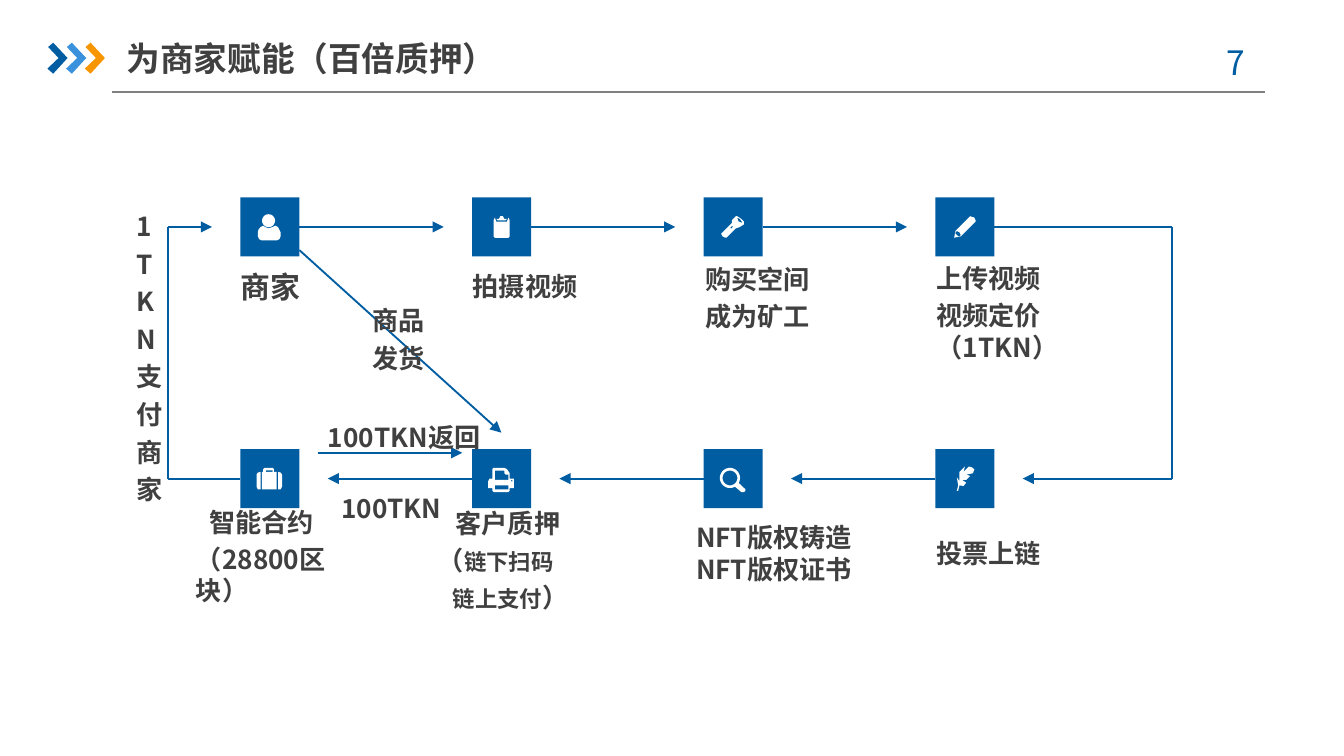
from dataclasses import dataclass
from math import cos, radians, sin

from lxml.etree import SubElement
from pptx import Presentation
from pptx.dml.color import RGBColor
from pptx.enum.shapes import MSO_CONNECTOR, MSO_SHAPE
from pptx.enum.text import MSO_ANCHOR as Anchor, PP_ALIGN as Align
from pptx.oxml.ns import qn
from pptx.util import Pt

BLUE = RGBColor(0x00, 0x5D, 0xA2)
SKY = RGBColor(0x39, 0x92, 0xDB)
ORANGE = RGBColor(0xF7, 0x96, 0x00)
GRAY = RGBColor(0x80, 0x80, 0x80)
DARK = RGBColor(0x40, 0x40, 0x40)
WHITE = RGBColor(0xFF, 0xFF, 0xFF)
FONT = "Noto Sans CJK SC"

# Flow grid, in points
TILE, GAP = 31.6, 15.2
COLUMNS = [128.8 + 124.1 * i for i in range(4)]
TOP, BOTTOM = 105.8, 240.6
TOP_MID, BOTTOM_MID = TOP + TILE / 2, BOTTOM + TILE / 2
LEFT_RAIL, RIGHT_RAIL = 89.8, 627.8
ICON_UNIT = 0.72
FINENESS = 100  # outline builder keeps whole numbers only

Point = tuple[float, float]
Contour = list[Point]


@dataclass(frozen=True)
class Run:
    text: str
    size: float = 14


@dataclass(frozen=True)
class Line:
    runs: tuple[Run, ...]
    indent: float = 0


@dataclass(frozen=True)
class Label:
    left: float
    top: float
    width: float
    height: float
    lines: tuple[Line, ...]
    bold: bool = True
    color: RGBColor = DARK
    align: Align = Align.LEFT
    anchor: Anchor = Anchor.MIDDLE
    margin: float = 7.2
    line_spacing: float = 1.0
    space_before: float = 3


@dataclass(frozen=True)
class Flow:
    start: Point
    end: Point
    arrow: bool = True
    color: RGBColor = BLUE
    width: float = 1


@dataclass(frozen=True)
class Step:
    column: int
    top: float
    icon: list[list[Contour]]  # shapes, each an outline followed by its holes


def lines(*texts: str, size: float = 14) -> tuple[Line, ...]:
    return tuple(Line((Run(text, size),)) for text in texts)


def annotation(left: float, top: float, width: float, height: float, *texts: str) -> Label:
    return Label(left, top, width, height, lines(*texts), align=Align.JUSTIFY,
                 anchor=Anchor.TOP, margin=0, line_spacing=1.2, space_before=0)


def arc(x: float, y: float, radius: float, start: int = 0, end: int = 360) -> Contour:
    return [(x + radius * cos(radians(a)), y + radius * sin(radians(a)))
            for a in range(start, end + 1, 10)]


def draw_outline(shapes, contours: list[Contour], left: float, top: float,
                 unit: float, color: RGBColor) -> None:
    fine = [[(x * FINENESS, y * FINENESS) for x, y in contour] for contour in contours]
    builder = shapes.build_freeform(*fine[0][0], scale=Pt(unit) / FINENESS)
    builder.add_line_segments(fine[0][1:])
    for hole in fine[1:]:
        builder.move_to(*hole[0])
        builder.add_line_segments(hole[1:])
    paint(builder.convert_to_shape(Pt(left), Pt(top)), color)


def paint(shape, color: RGBColor) -> None:
    shape.shadow.inherit = False
    shape.fill.solid()
    shape.fill.fore_color.rgb = color
    shape.line.fill.background()


def draw_step(shapes, step: Step) -> None:
    left = COLUMNS[step.column]
    tile = shapes.add_shape(MSO_SHAPE.RECTANGLE, Pt(left), Pt(step.top), Pt(TILE), Pt(TILE))
    paint(tile, BLUE)
    for contours in step.icon:
        draw_outline(shapes, contours, left, step.top, ICON_UNIT, WHITE)


def draw_flow(shapes, flow: Flow) -> None:
    ends = [Pt(value) for value in (*flow.start, *flow.end)]
    connector = shapes.add_connector(MSO_CONNECTOR.STRAIGHT, *ends)
    connector.line.color.rgb = flow.color
    connector.line.width = Pt(flow.width)
    if flow.arrow:
        SubElement(connector.line._get_or_add_ln(), qn("a:tailEnd"), type="triangle")
    SubElement(connector._element.spPr, qn("a:effectLst"))


def draw_label(shapes, label: Label) -> None:
    box = shapes.add_textbox(Pt(label.left), Pt(label.top), Pt(label.width), Pt(label.height))
    frame = box.text_frame
    frame.word_wrap = True
    frame.vertical_anchor = label.anchor
    frame.margin_left = frame.margin_right = Pt(label.margin)
    frame.margin_top = frame.margin_bottom = Pt(label.margin / 2)
    for i, line in enumerate(label.lines):
        paragraph = frame.paragraphs[0] if i == 0 else frame.add_paragraph()
        paragraph.alignment = label.align
        paragraph.line_spacing = label.line_spacing
        if i:
            paragraph.space_before = Pt(label.space_before)
        if line.indent:
            paragraph._p.get_or_add_pPr().set("marL", str(Pt(line.indent)))
        for part in line.runs:
            run = paragraph.add_run()
            run.text = part.text
            run.font.size = Pt(part.size)
            run.font.bold = label.bold
            run.font.color.rgb = label.color
            run.font.name = FONT
            SubElement(run._r.get_or_add_rPr(), qn("a:ea"), typeface=FONT)


# Icons, in units of ICON_UNIT from the tile's corner
PERSON = [[arc(21, 17.3, 4.8)],
          [[(30, 26), (29, 24), (28, 22), (26, 21), (24, 22), (21, 23), (18.5, 22), (17, 21),
            (15, 22), (13.5, 24), (13, 26), (13, 29), (14, 31), (16, 32), (27, 32), (29, 31), (30, 29)]]]
CLIPBOARD = [[[(27, 15), (26, 18), (18, 18), (17, 15), (16, 17), (16, 29), (17, 30), (27, 30), (28, 29), (28, 17)]],
             [[(25, 17), (26, 16), (24, 16), (23, 14), (21, 14), (20, 16), (18, 16), (19, 17)]]]
FLASHLIGHT = [[[(28, 16), (25, 14), (24, 14), (21, 17), (21, 19), (13, 27), (14, 29), (16, 30),
                (17, 30), (24, 23), (27, 22), (30, 20), (30, 18)],
               [(26, 18), (25, 15), (27, 16), (29, 19)], [(20, 23), (20, 22), (22, 21), (21, 23)]]]
PENCIL = [[[(29, 15), (26, 14), (15, 25), (14, 30), (19, 29), (30, 18), (30, 17)],
           [(18, 29), (17, 29), (15, 27), (15, 26), (16, 25), (18, 26), (19, 28)]]]
FEATHER = [[[(17, 31), (18, 27), (21, 27.5), (23, 25), (20, 23), (23, 23), (26, 20), (23, 19),
             (28, 18), (29, 15), (27, 13.5), (25, 13), (21, 17), (22, 13), (18, 17), (18, 24),
             (16, 21), (17, 27), (16, 31)]]]
MAGNIFIER = [[arc(19.5, 21.5, 7.5, 60, 390) + [(31, 30), (31, 31), (30, 32), (28, 32)],
              arc(19.5, 21.5, 5.5)]]
PRINTER = [[[(31, 22), (28, 22), (28, 18), (26, 15), (24, 14), (16, 14), (15, 15), (15, 22), (13, 22),
             (12, 24), (12, 29), (15, 29), (15, 31), (16, 32), (27, 32), (28, 31), (28, 29), (31, 29), (31, 24)],
            [(27, 23), (17, 23), (17, 16), (24, 16), (24, 18), (25, 19), (27, 19)],
            [(27, 30), (17, 30), (17, 27), (27, 27)], [(29, 24), (29, 23), (30, 23), (30, 24)]]]
SUITCASE = [[[(13, 17.5), (12, 19), (12, 28), (13, 30), (15, 30), (15, 17)]],
            [[(25, 15), (24, 14), (18, 14), (17, 15), (17, 17), (16, 17), (16, 30), (27, 30), (27, 17), (25, 17)],
             [(24, 17), (19, 17), (19, 16), (24, 16)]],
            [[(30, 17.5), (28, 17), (28, 30), (30, 30), (31, 28), (31, 19)]]]

CHEVRON = [(0.4, 2.3), (3.1, 0), (10.8, 8.2), (3.1, 16.6), (0, 13.9), (6, 8.2)]
STEPS = [Step(i, TOP, icon) for i, icon in enumerate((PERSON, CLIPBOARD, FLASHLIGHT, PENCIL))]
STEPS += [Step(i, BOTTOM, icon) for i, icon in enumerate((SUITCASE, PRINTER, MAGNIFIER, FEATHER))]

# Arrows between neighbouring steps, then the two side rails
FLOWS = []
for here, following in zip(COLUMNS, COLUMNS[1:]):
    FLOWS.append(Flow((here + TILE, TOP_MID), (following - GAP, TOP_MID)))
    FLOWS.append(Flow((following, BOTTOM_MID), (here + TILE + GAP, BOTTOM_MID)))
FLOWS += [
    Flow((COLUMNS[3] + TILE, TOP_MID), (RIGHT_RAIL, TOP_MID), arrow=False),
    Flow((RIGHT_RAIL, TOP_MID), (RIGHT_RAIL, BOTTOM_MID), arrow=False),
    Flow((RIGHT_RAIL, BOTTOM_MID), (COLUMNS[3] + TILE + GAP, BOTTOM_MID)),
    Flow((COLUMNS[0], BOTTOM_MID), (LEFT_RAIL, BOTTOM_MID), arrow=False),
    Flow((LEFT_RAIL, BOTTOM_MID), (LEFT_RAIL, TOP_MID), arrow=False),
    Flow((LEFT_RAIL, TOP_MID), (COLUMNS[0] - GAP, TOP_MID)),
    Flow((170.6, 242.6), (247.7, 242.6)),  # tokens returned
    Flow((COLUMNS[0] + TILE, 134), (268.6, 231.8)),  # goods shipped
]

LABELS = [
    # Header
    Label(67.9, 15.8, 203.8, 30.2, lines("为商家赋能（百倍质押）", size=18), margin=0),
    Label(635.8, 18.7, 52.6, 28.8, lines("7", size=18), bold=False, color=BLUE,
          align=Align.CENTER, anchor=Anchor.TOP),
    # Step captions
    Label(121.7, 145.4, 96.5, 15.8, lines("商家", size=16)),
    Label(246.2, 145.4, 101.5, 15.8, lines("拍摄视频")),
    Label(370.8, 145.4, 96.5, 28.1, lines("购买空间", "成为矿工")),
    Label(494.6, 153.4, 96.5, 28.1, lines("上传视频", "视频定价（1TKN）")),
    Label(97.9, 283, 101.5, 29.5, (Line((Run("智能合约"),), 7.2), *lines("（28800区块）"))),
    Label(227.5, 285.1, 87.1, 30.2, (
        Line((Run("客户质押"),), 9.5),
        Line((Run("（"), Run("链下扫码", 12))),
        Line((Run("链上支付", 12), Run("）")), 8))),
    Label(365.8, 279.4, 101.5, 33.8, lines("NFT版权铸造NFT版权证书")),
    Label(494.6, 279.4, 96.5, 33.8, lines("投票上链")),
    # Notes on the arrows
    annotation(175.7, 222.5, 108, 18.7, "100TKN返回"),
    annotation(182.9, 260.6, 108, 18.7, "100TKN"),
    annotation(73.4, 109.4, 15.1, 162.7, "1", "T", "K", "N", "支", "付商", "家"),
    annotation(199.4, 159.8, 36, 41, "商品", "发货"),
]


def main() -> None:
    deck = Presentation()
    deck.slide_width, deck.slide_height = Pt(720), Pt(405)
    shapes = deck.slides.add_slide(deck.slide_layouts[6]).shapes

    # Header rule and chevrons
    draw_flow(shapes, Flow((59.8, 49.3), (677.5, 49.3), arrow=False, color=GRAY, width=0.75))
    for i, color in enumerate((BLUE, SKY, ORANGE)):
        draw_outline(shapes, [CHEVRON], 25.4 + 10 * i, 22.9, 1, color)

    # Process diagram
    for flow in FLOWS:
        draw_flow(shapes, flow)
    for step in STEPS:
        draw_step(shapes, step)
    for label in LABELS:
        draw_label(shapes, label)

    deck.save("out.pptx")


if __name__ == "__main__":
    main()
